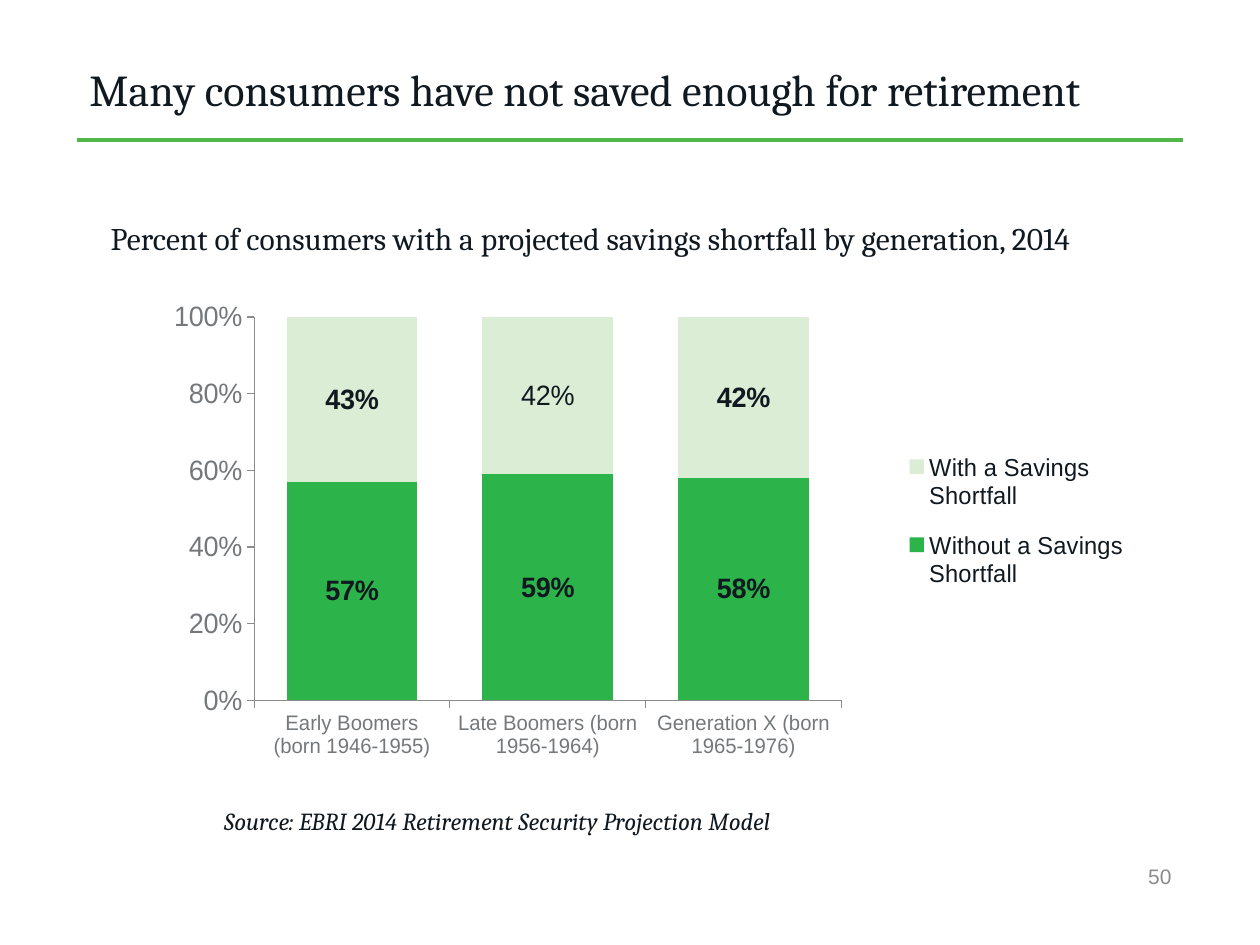
from dataclasses import dataclass

from lxml import etree
from pptx import Presentation
from pptx import util as u
from pptx.chart.data import CategoryChartData
from pptx.dml.color import RGBColor
from pptx.enum import chart as ch, shapes, text
from pptx.oxml.ns import qn

COLORS = {
    "ink": "101820",
    "gray": "75787B",
    "axis": "8B8B8B",
    "number": "8C8C8D",
    "rule": "50B748",
    "without": "2CB34A",
    "with": "DBEDD4",
}
CATEGORIES = [
    "Early Boomers (born 1946-1955)",
    "Late Boomers (born 1956-1964)",
    "Generation X (born 1965-1976)",
]


@dataclass
class Series:
    name: str
    values: tuple[float, ...]
    color: str


SERIES = [
    Series("Without a Savings Shortfall", (0.57, 0.59, 0.58), "without"),
    Series("With a Savings Shortfall", (0.43, 0.41, 0.42), "with"),
]


def rgb(name: str) -> RGBColor:
    return RGBColor.from_string(COLORS[name])


def set_font(font, size: float, color: str = "ink", name: str = "Arial",
             bold: bool = False, italic: bool = False) -> None:
    font.size, font.name = u.Pt(size), name
    font.bold, font.italic = bold, italic
    font.color.rgb = rgb(color)


def add_text(s, content: str, box: tuple[float, ...], *, align=text.PP_ALIGN.LEFT,
             anchor=text.MSO_ANCHOR.TOP, wrap: bool = True, **font) -> None:
    tf = s.shapes.add_textbox(*map(u.Pt, box)).text_frame
    tf.word_wrap, tf.vertical_anchor = wrap, anchor
    p = tf.paragraphs[0]
    p.alignment = align
    r = p.add_run()
    r.text = content
    set_font(r.font, **font)


def add_rule(s, left: float, right: float, y: float) -> None:
    line = s.shapes.add_connector(shapes.MSO_CONNECTOR.STRAIGHT,
                                  u.Pt(left), u.Pt(y), u.Pt(right), u.Pt(y))
    line.line.color.rgb = rgb("rule")
    line.line.width = u.Pt(2)
    etree.SubElement(line._element.spPr, qn("a:effectLst"))


def set_layout(parent, x: float, y: float, w: float, h: float, inner: bool = False) -> None:
    """Place a plot area or legend by fractions of the chart size."""
    for old in parent.findall(qn("c:layout")):
        parent.remove(old)
    layout = etree.Element(qn("c:layout"))
    manual = etree.SubElement(layout, qn("c:manualLayout"))
    settings = [("layoutTarget", "inner")] if inner else []
    settings += [("xMode", "edge"), ("yMode", "edge"), ("x", x), ("y", y), ("w", w), ("h", h)]
    for tag, value in settings:
        etree.SubElement(manual, qn(f"c:{tag}")).set("val", str(value))
    position = parent.find(qn("c:legendPos"))
    if position is None:
        parent.insert(0, layout)
    else:
        position.addnext(layout)


def style_axis(axis, size: float) -> None:
    axis.has_major_gridlines = False
    axis.major_tick_mark = ch.XL_TICK_MARK.OUTSIDE
    axis.minor_tick_mark = ch.XL_TICK_MARK.NONE
    axis.format.line.color.rgb = rgb("axis")
    set_font(axis.tick_labels.font, size, "gray")


def style_series(series, color: str) -> None:
    series.format.fill.solid()
    series.format.fill.fore_color.rgb = rgb(color)
    labels = series.data_labels
    labels.show_value = True
    labels.number_format, labels.number_format_is_linked = "0%", False
    set_font(labels.font, 16, bold=True)


def add_shortfall_chart(s, box: tuple[float, ...]) -> None:
    data = CategoryChartData(number_format="0%")
    data.categories = CATEGORIES
    for item in SERIES:
        data.add_series(item.name, item.values)
    chart = s.shapes.add_chart(ch.XL_CHART_TYPE.COLUMN_STACKED_100,
                               *map(u.Pt, box), data).chart
    chart.has_title = False
    set_font(chart.font, 10, name="Cambria")

    plot = chart.plots[0]
    plot.gap_width, plot.overlap, plot.vary_by_categories = 50, 100, False
    for series, item in zip(plot.series, SERIES):
        style_series(series, item.color)
    p = plot.series[1].points[1].data_label.text_frame.paragraphs[0]
    r = p.add_run()
    r.text = "42%"
    set_font(r.font, 16)

    style_axis(chart.category_axis, 12)
    axis = chart.value_axis
    style_axis(axis, 16)
    axis.minimum_scale, axis.maximum_scale, axis.major_unit = 0, 1, 0.2
    axis.tick_labels.number_format = "0%"
    axis.tick_labels.number_format_is_linked = False

    chart.has_legend = True
    legend = chart.legend
    legend.position = ch.XL_LEGEND_POSITION.RIGHT
    legend.include_in_layout = False
    set_font(legend.font, 14)
    set_layout(legend._element, 0.73, 0.3, 0.25, 0.36)
    set_layout(plot._element.getparent(), 0.05, 0.07, 0.62, 0.77, inner=True)


def main() -> None:
    prs = Presentation()
    prs.slide_width, prs.slide_height = u.Pt(720), u.Pt(540)
    s = prs.slides.add_slide(prs.slide_layouts[6])
    middle = text.MSO_ANCHOR.MIDDLE

    add_rule(s, 44, 676, 80)
    add_text(s, "50", (448.5, 486, 228, 29), align=text.PP_ALIGN.RIGHT, anchor=middle,
             size=12, color="number")
    add_text(s, "Many consumers have not saved enough for retirement",
             (44, 21.6, 633, 58.4), anchor=middle, size=25.2, name="Cambria")
    add_shortfall_chart(s, (99.4, 161.3, 560, 284.4))
    add_text(s, "Percent of consumers with a projected savings shortfall by generation, 2014",
             (56.2, 121.7, 620, 29), wrap=False, size=18, name="Cambria")
    add_text(s, "Source: EBRI 2014 Retirement Security Projection Model",
             (121, 457.2, 512.6, 24.5), size=14, name="Cambria", italic=True)
    prs.save("out.pptx")


if __name__ == "__main__":
    main()
